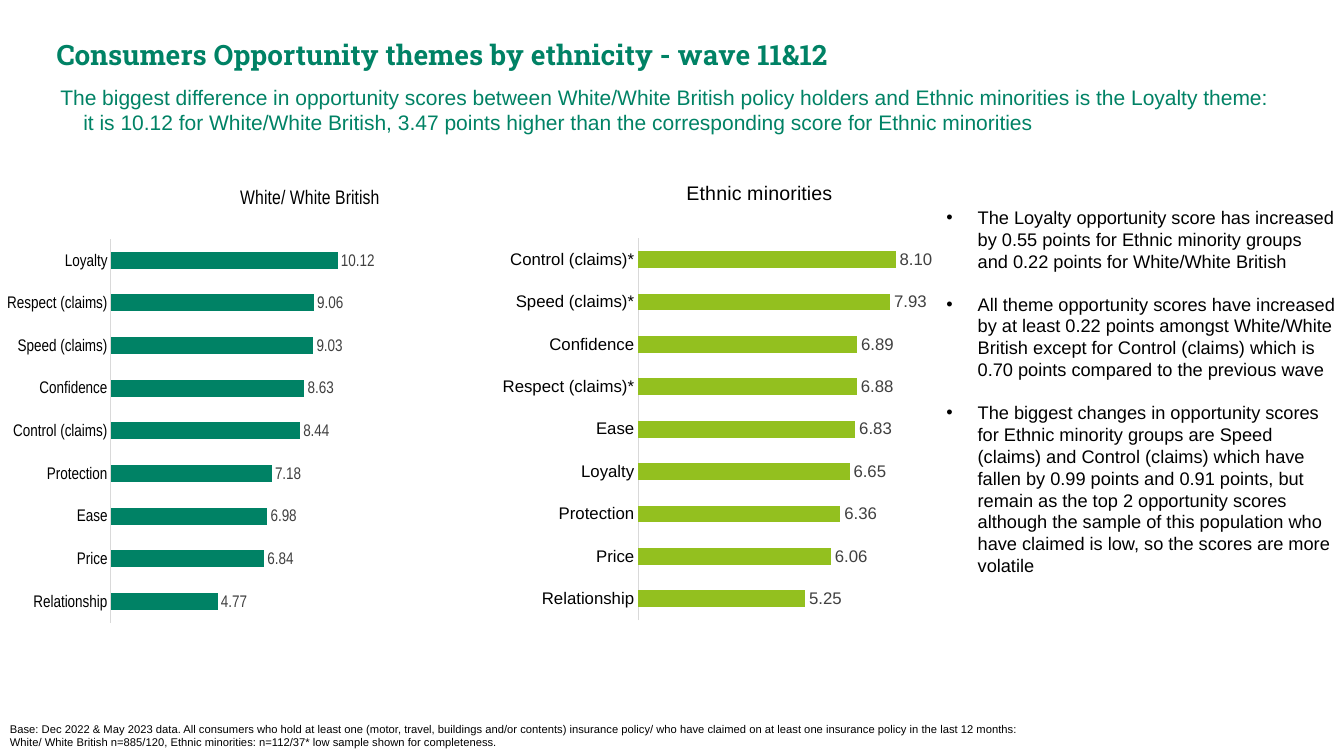
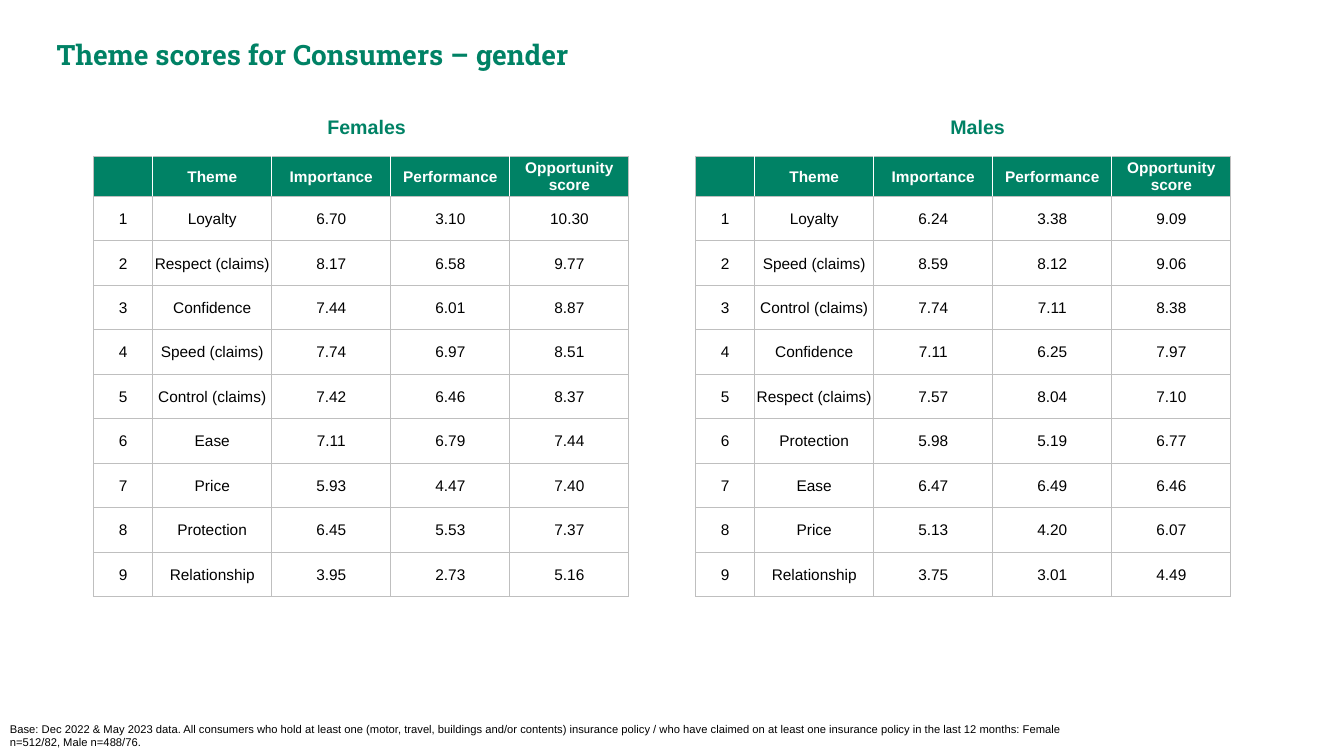
from dataclasses import dataclass

from lxml import etree
from pptx import Presentation
from pptx import util as u
from pptx.chart import data as chart_data
from pptx.dml.color import RGBColor
from pptx.enum import chart as charts, text
from pptx.oxml.ns import qn


@dataclass(frozen=True)
class Theme:
    green: RGBColor = RGBColor.from_string("008265")
    lime: RGBColor = RGBColor.from_string("93C01F")
    black: RGBColor = RGBColor.from_string("000000")
    white: RGBColor = RGBColor.from_string("FFFFFF")
    label_grey: RGBColor = RGBColor.from_string("404040")
    axis_grey: RGBColor = RGBColor.from_string("D9D9D9")
    border_grey: RGBColor = RGBColor.from_string("BFBFBF")
    title_font: str = "Roboto Slab"
    body_font: str = "Arial"
    title: int = 20
    subtitle: int = 15
    heading: int = 14
    bullet: int = 13
    chart: int = 12
    table: int = 11
    footnote: int = 8


theme = Theme()


def write(frame, words, size, color, bold=False, font=theme.body_font):
    frame.text = words
    frame.word_wrap = True
    for paragraph in frame.paragraphs:
        for run in paragraph.runs:
            run.font.name = font
            run.font.size = u.Pt(size)
            run.font.bold = bold
            run.font.color.rgb = color


def manual_layout(**settings):
    layout = etree.Element(qn("c:layout"))
    manual = etree.SubElement(layout, qn("c:manualLayout"))
    for tag, value in settings.items():
        etree.SubElement(manual, qn(f"c:{tag}")).set("val", str(value))
    return layout


deck = Presentation()
deck.slide_width = u.Cm(33.87)
deck.slide_height = u.Cm(19.05)

pages = [
    ("Consumers Opportunity themes by ethnicity - wave 11&12",
     "Base: Dec 2022 & May 2023 data. All consumers who hold at least one (motor, travel, "
     "buildings and/or contents) insurance policy/ who have claimed on at least one insurance "
     "policy in the last 12 months: White/ White British n=885/120, Ethnic minorities: "
     "n=112/37* low sample shown for completeness.", 26.37),
    ("Theme scores for Consumers – gender",
     "Base: Dec 2022 & May 2023 data. All consumers who hold at least one (motor, travel, "
     "buildings and/or contents) insurance policy / who have claimed on at least one insurance "
     "policy in the last 12 months: Female n=512/82, Male n=488/76.", 27.7),
]
for headline, base, base_width in pages:
    slide = deck.slides.add_slide(deck.slide_layouts[5])
    title = slide.shapes.title
    title.left, title.top = u.Cm(1.17), u.Cm(0.81)
    title.width, title.height = u.Cm(31.19), u.Cm(1.12)
    write(title.text_frame, headline, theme.title, theme.green, True, theme.title_font)
    title.text_frame.auto_size = text.MSO_AUTO_SIZE.NONE
    title.text_frame.vertical_anchor = text.MSO_ANCHOR.MIDDLE
    title.text_frame.paragraphs[0].alignment = text.PP_ALIGN.LEFT
    footnote = slide.shapes.add_textbox(0, u.Cm(18.07), u.Cm(base_width), u.Cm(0.98))
    write(footnote.text_frame, base, theme.footnote, theme.black)

ethnicity, gender = deck.slides

subtitle = ethnicity.shapes.add_textbox(u.Cm(1.27), u.Cm(2.01), u.Cm(31.1), u.Cm(1.55))
write(subtitle.text_frame,
      "The biggest difference in opportunity scores between White/White British policy holders "
      "and Ethnic minorities is the Loyalty theme: it is 10.12 for White/White British, 3.47 "
      "points higher than the corresponding score for Ethnic minorities",
      theme.subtitle, theme.green)
hanging = subtitle.text_frame.paragraphs[0]._p.get_or_add_pPr()
hanging.set("marL", str(u.Cm(0.58)))
hanging.set("indent", str(-u.Cm(0.58)))

score_charts = [
    ("White/ White British", theme.green, 12, (0.18, 4.17, 12.34, 13.23), 0.34,
     (0.018, 0.14, 0.685, 0.731),
     [("Loyalty", 10.12), ("Respect (claims)", 9.06), ("Speed (claims)", 9.03),
      ("Confidence", 8.63), ("Control (claims)", 8.44), ("Protection", 7.18),
      ("Ease", 6.98), ("Price", 6.84), ("Relationship", 4.77)]),
    ("Ethnic minorities", theme.lime, 9, (12.52, 4.06, 12.34, 13.16), 0.38,
     (0.289, 0.148, 0.584, 0.731),
     [("Control (claims)*", 8.10), ("Speed (claims)*", 7.93), ("Confidence", 6.89),
      ("Respect (claims)*", 6.88), ("Ease", 6.83), ("Loyalty", 6.65),
      ("Protection", 6.36), ("Price", 6.06), ("Relationship", 5.25)]),
]
for group, color, maximum, frame, title_x, (x, y, w, h), scores in score_charts:
    data = chart_data.CategoryChartData(number_format="0.00")
    data.categories = [name for name, score in scores]
    data.add_series("Series 1", [score for name, score in scores])
    chart = ethnicity.shapes.add_chart(
        charts.XL_CHART_TYPE.BAR_CLUSTERED, *map(u.Cm, frame), data).chart
    chart.has_legend = False
    chart.font.name = theme.body_font
    chart.font.size = u.Pt(theme.chart)
    chart.font.color.rgb = theme.black

    chart.has_title = True
    write(chart.chart_title.text_frame, group, theme.heading, theme.black)
    title_xml = chart._chartSpace.chart.find(qn("c:title"))
    plot_xml = chart._chartSpace.chart.plotArea
    for parent in (title_xml, plot_xml):
        for automatic in parent.findall(qn("c:layout")):
            parent.remove(automatic)
    title_xml.find(qn("c:overlay")).addprevious(
        manual_layout(xMode="edge", yMode="edge", x=title_x, y=0.03))
    plot_xml.insert(0, manual_layout(
        layoutTarget="inner", xMode="edge", yMode="edge", x=x, y=y, w=w, h=h))

    themes_axis = chart.category_axis
    themes_axis.reverse_order = True
    themes_axis.major_tick_mark = charts.XL_TICK_MARK.NONE
    themes_axis.format.line.color.rgb = theme.axis_grey
    themes_axis.format.line.width = u.Pt(0.75)
    scores_axis = chart.value_axis
    scores_axis.visible = False
    scores_axis.has_major_gridlines = False
    scores_axis.minimum_scale = 0
    scores_axis.maximum_scale = maximum

    bars = chart.plots[0]
    bars.gap_width = 150
    bars.vary_by_categories = False
    bars.series[0].format.fill.solid()
    bars.series[0].format.fill.fore_color.rgb = color
    bars.has_data_labels = True
    labels = bars.data_labels
    labels.show_value = True
    labels.position = charts.XL_LABEL_POSITION.OUTSIDE_END
    labels.number_format = "0.00"
    labels.number_format_is_linked = False
    labels.font.name = theme.body_font
    labels.font.size = u.Pt(theme.chart)
    labels.font.color.rgb = theme.label_grey

findings = [
    "The Loyalty opportunity score has increased by 0.55 points for Ethnic minority groups and "
    "0.22 points for White/White British",
    "All theme opportunity scores have increased by at least 0.22 points amongst White/White "
    "British except for Control (claims) which is 0.70 points compared to the previous wave",
    "The biggest changes in opportunity scores for Ethnic minority groups are Speed (claims) and "
    "Control (claims) which have fallen by 0.99 points and 0.91 points, but remain as the top 2 "
    "opportunity scores although the sample of this population who have claimed is low, so the "
    "scores are more volatile",
]
commentary = ethnicity.shapes.add_textbox(
    u.Cm(23.85), u.Cm(5.2), u.Cm(9.83), u.Cm(9.8)).text_frame
commentary.margin_left = commentary.margin_right = 0
commentary.margin_top = commentary.margin_bottom = 0
write(commentary, "\n".join(findings), theme.bullet, theme.black)
for position, paragraph in enumerate(commentary.paragraphs):
    if position:
        paragraph.space_before = u.Pt(15)
    bullet = paragraph._p.get_or_add_pPr()
    bullet.set("marL", str(u.Cm(0.79)))
    bullet.set("indent", str(-u.Cm(0.79)))
    etree.SubElement(bullet, qn("a:buFont")).set("typeface", theme.body_font)
    etree.SubElement(bullet, qn("a:buChar")).set("char", "•")

header = ("", "Theme", "Importance", "Performance", "Opportunity score")
score_tables = [
    ("Females", 8.0, 2.36, [
        ("Loyalty", "6.70", "3.10", "10.30"),
        ("Respect (claims)", "8.17", "6.58", "9.77"),
        ("Confidence", "7.44", "6.01", "8.87"),
        ("Speed (claims)", "7.74", "6.97", "8.51"),
        ("Control (claims)", "7.42", "6.46", "8.37"),
        ("Ease", "7.11", "6.79", "7.44"),
        ("Price", "5.93", "4.47", "7.40"),
        ("Protection", "6.45", "5.53", "7.37"),
        ("Relationship", "3.95", "2.73", "5.16")]),
    ("Males", 23.7, 17.53, [
        ("Loyalty", "6.24", "3.38", "9.09"),
        ("Speed (claims)", "8.59", "8.12", "9.06"),
        ("Control (claims)", "7.74", "7.11", "8.38"),
        ("Confidence", "7.11", "6.25", "7.97"),
        ("Respect (claims)", "7.57", "8.04", "7.10"),
        ("Protection", "5.98", "5.19", "6.77"),
        ("Ease", "6.47", "6.49", "6.46"),
        ("Price", "5.13", "4.20", "6.07"),
        ("Relationship", "3.75", "3.01", "4.49")]),
]
for group, heading_left, table_left, scores in score_tables:
    heading = gender.shapes.add_textbox(u.Cm(heading_left), u.Cm(2.77), u.Cm(5.26), u.Cm(0.86))
    write(heading.text_frame, group, theme.heading, theme.green, True)

    rows = [header] + [(str(rank), *row) for rank, row in enumerate(scores, 1)]
    table = gender.shapes.add_table(
        len(rows), len(header), u.Cm(table_left), u.Cm(3.94), u.Cm(13.49), u.Cm(11.09)).table
    table.first_row = table.horz_banding = False
    for index, column in enumerate(table.columns):
        column.width = u.Cm(3 if index else 1.49)
    for r, row in enumerate(rows):
        is_header = r == 0
        table.rows[r].height = u.Cm(1.01 if is_header else 1.12)
        for c, words in enumerate(row):
            cell = table.cell(r, c)
            cell.margin_left = cell.margin_right = cell.margin_top = u.Cm(0.03)
            cell.margin_bottom = 0
            cell.vertical_anchor = text.MSO_ANCHOR.MIDDLE
            write(cell.text_frame, words, theme.table,
                  theme.white if is_header else theme.black, is_header)
            cell.text_frame.paragraphs[0].alignment = text.PP_ALIGN.CENTER

            white_sides = set()
            if is_header and c > 0:
                white_sides.add("lnL")
            if is_header and c < len(header) - 1:
                white_sides.add("lnR")
            for side in ("lnL", "lnR", "lnT", "lnB"):
                is_white = side in white_sides
                border = etree.SubElement(cell._tc.get_or_add_tcPr(), qn(f"a:{side}"))
                border.set("w", str(u.Pt(1 if is_white else 0.75)))
                paint = etree.SubElement(border, qn("a:solidFill"))
                etree.SubElement(paint, qn("a:srgbClr")).set(
                    "val", str(theme.white if is_white else theme.border_grey))
            if is_header:
                cell.fill.solid()
                cell.fill.fore_color.rgb = theme.green
            else:
                cell.fill.background()

deck.save("out.pptx")
